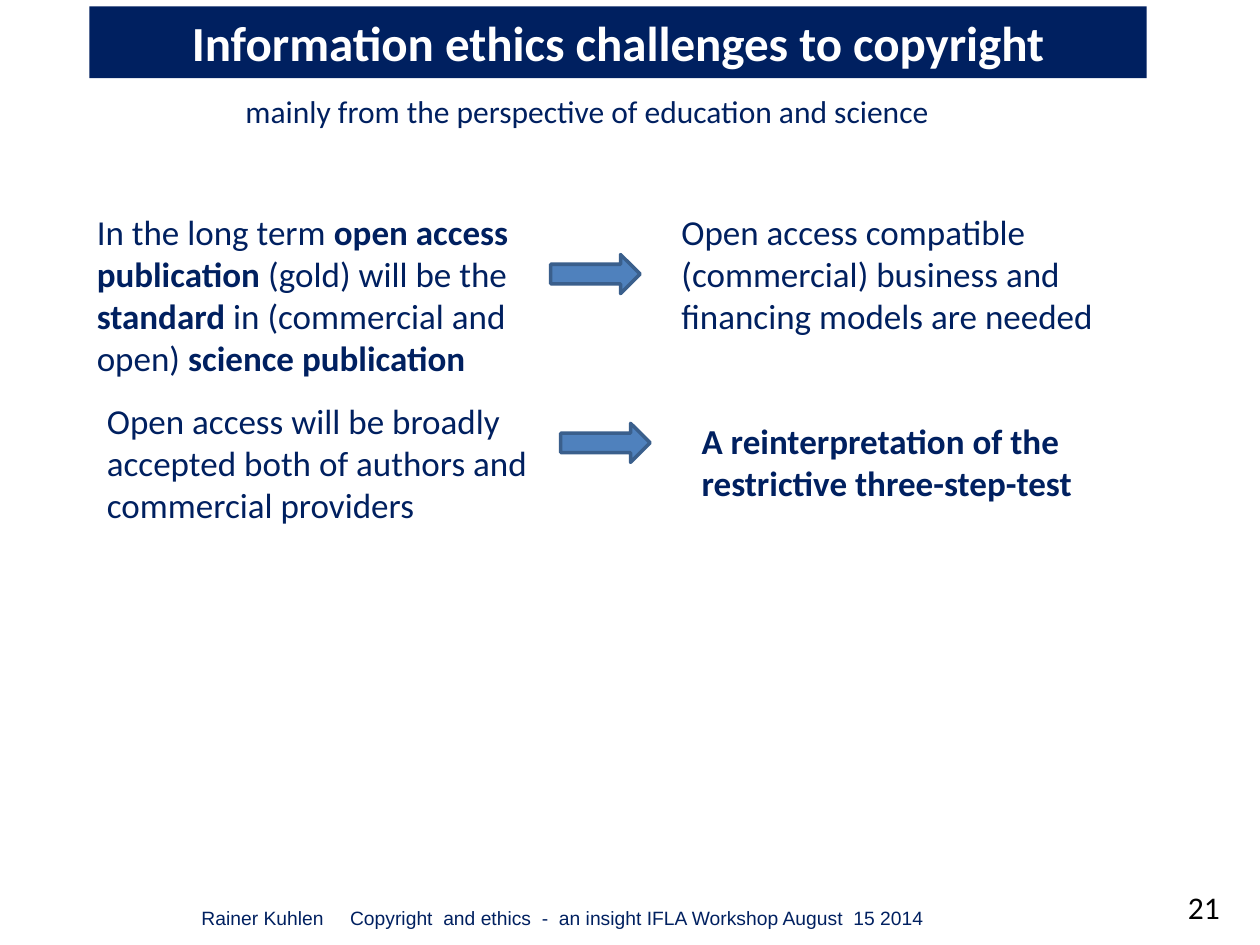
from lxml.etree import SubElement
from pptx import Presentation
from pptx.dml.color import RGBColor
from pptx.enum.shapes import MSO_SHAPE
from pptx.enum.text import MSO_ANCHOR, PP_ALIGN
from pptx.oxml.ns import qn
from pptx.util import Inches, Pt

COLORS = {
    "navy": "002060",
    "white": "FFFFFF",
    "black": "000000",
    "arrow": "4F81BD",
    "arrow_edge": "3A5F8C",
}


def color(name):
    return RGBColor.from_string(COLORS[name])


def place(shape, left, top, width, height):
    shape.left, shape.top = Inches(left), Inches(top)
    shape.width, shape.height = Inches(width), Inches(height)


def write_text(shape, text, size=20, font="Calibri", ink="navy", bold=False,
               align=PP_ALIGN.LEFT, anchor=MSO_ANCHOR.TOP):
    """Fill one paragraph; text between ** marks has its weight switched."""
    frame = shape.text_frame
    frame.word_wrap = True
    frame.vertical_anchor = anchor
    paragraph = frame.paragraphs[0]
    paragraph.alignment = align
    for index, part in enumerate(text.split("**")):
        if part:
            run = paragraph.add_run()
            run.text = part
            run.font.size = Pt(size)
            run.font.name = font
            run.font.bold = bold != (index % 2 == 1)
            run.font.color.rgb = color(ink)
    return paragraph


def add_text(slide, box, text, **text_format):
    textbox = slide.shapes.add_textbox(*map(Inches, box))
    return write_text(textbox, text, **text_format)


def add_title(slide, text):
    title = slide.shapes.title
    place(title, 0.71, 0.05, 8.39, 0.57)
    title.fill.solid()
    title.fill.fore_color.rgb = color("navy")
    write_text(title, text, size=28, ink="white", bold=True,
               align=PP_ALIGN.CENTER, anchor=MSO_ANCHOR.MIDDLE)


def add_arrow(slide, left, top):
    arrow = slide.shapes.add_shape(
        MSO_SHAPE.RIGHT_ARROW, Inches(left), Inches(top), Inches(0.71), Inches(0.31))
    arrow.shadow.inherit = False
    arrow.fill.solid()
    arrow.fill.fore_color.rgb = color("arrow")
    arrow.line.color.rgb = color("arrow_edge")
    arrow.line.width = Pt(2)


def add_tab_stop(paragraph, position):
    tabs = SubElement(paragraph._p.get_or_add_pPr(), qn("a:tabLst"))
    SubElement(tabs, qn("a:tab"), pos=str(Inches(position)), algn="l")


def add_footer(slide):
    footer = add_text(
        slide, (1.5, 7.14, 7.42, 0.29),
        "Rainer Kuhlen\tCopyright  and ethics  -  an insight IFLA Workshop August  15 2014",
        size=11, font="Arial")
    add_tab_stop(footer, 1.18)
    add_text(slide, (9.33, 7, 0.58, 0.4), "21", size=18, ink="black")


def main():
    prs = Presentation()
    prs.slide_width, prs.slide_height = Inches(10), Inches(7.5)
    slide = prs.slides.add_slide(prs.slide_layouts[5])

    add_title(slide, "Information ethics challenges to copyright")
    add_text(slide, (1.85, 0.68, 6.3, 0.4),
             "mainly from the perspective of education and science", size=18)

    statements = [
        ((0.67, 1.62, 3.86, 1.45),
         "In the long term **open access publication** (gold) will be the "
         "**standard** in (commercial and open) **science publication**"),
        ((0.75, 3.12, 3.86, 1.11),
         "Open access will be broadly accepted both of authors and "
         "commercial providers"),
    ]
    consequences = [
        ((5.31, 1.62, 3.7, 1.11),
         "Open access compatible (commercial) business and financing "
         "models are needed"),
        ((5.47, 3.28, 3.7, 0.77),
         "**A reinterpretation of the restrictive three-step-test**"),
    ]
    for box, text in statements + consequences:
        add_text(slide, box, text)
    for left, top in [(4.37, 2.02), (4.45, 3.36)]:
        add_arrow(slide, left, top)

    add_footer(slide)
    prs.save("out.pptx")


if __name__ == "__main__":
    main()
